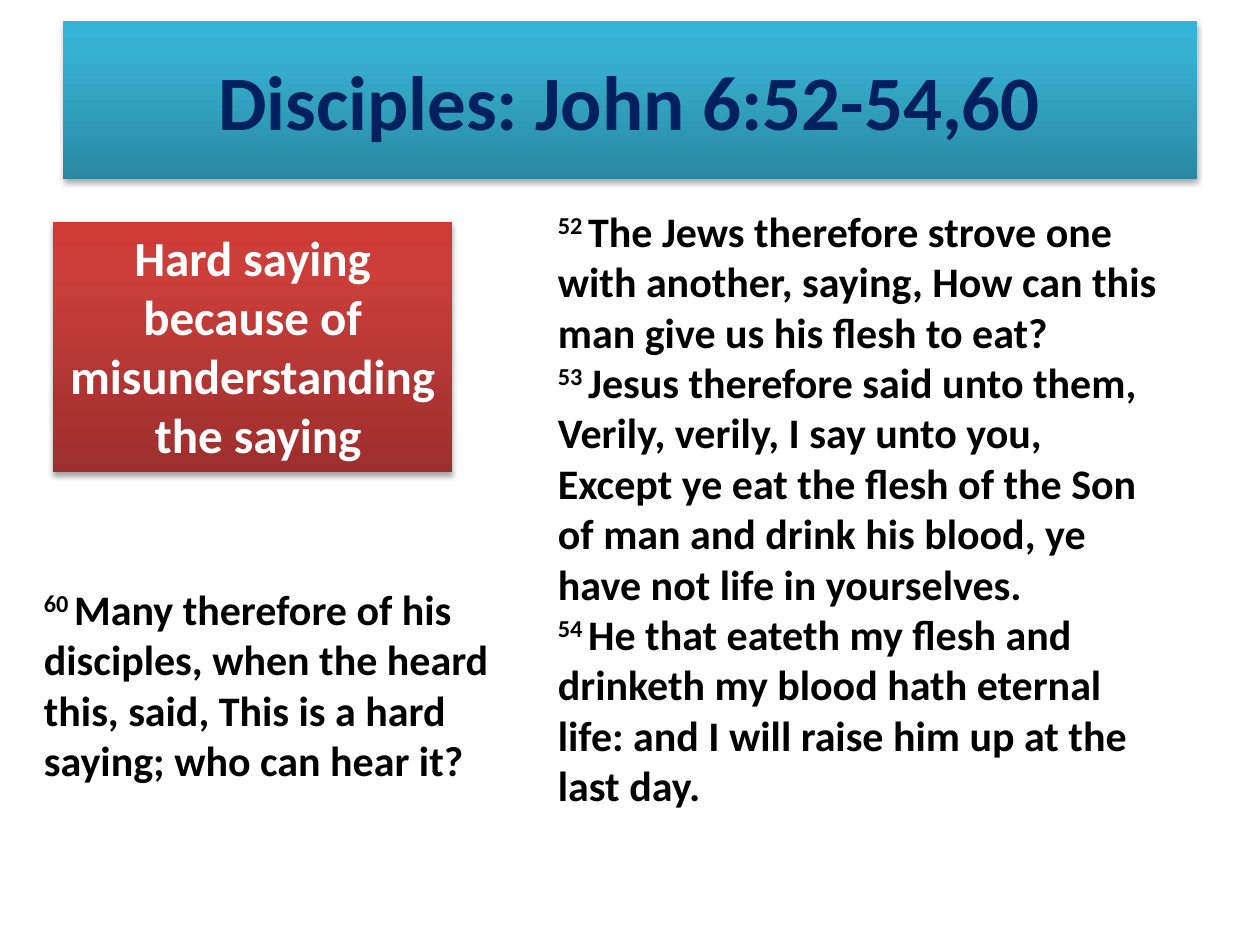
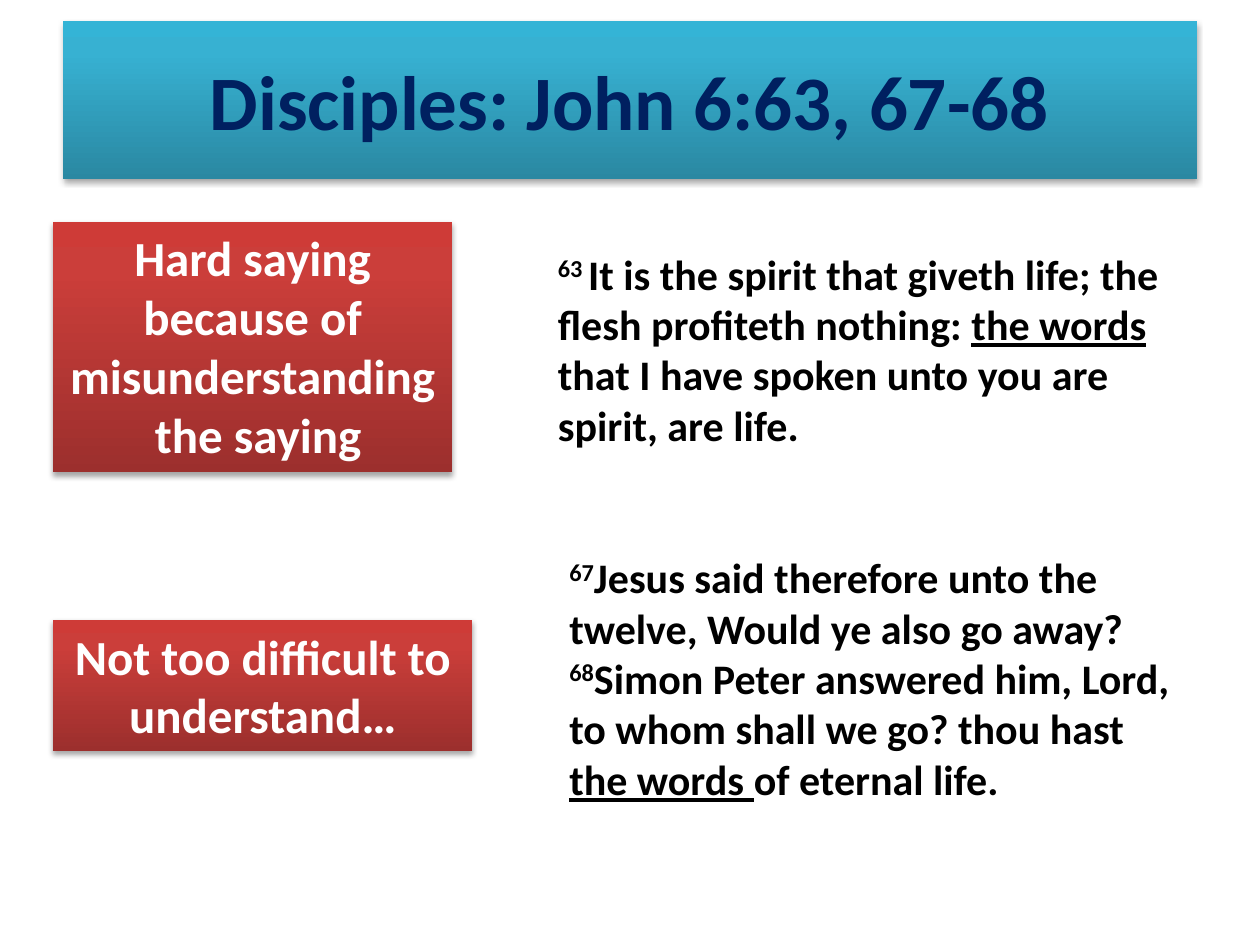
import pptx
import pptx.dml.color
import pptx.enum.shapes
import pptx.enum.text
import pptx.oxml
import pptx.oxml.ns
import pptx.util
from dataclasses import dataclass

Inches = pptx.util.Inches
Align = pptx.enum.text.PP_ALIGN
Anchor = pptx.enum.text.MSO_ANCHOR
NS = pptx.oxml.ns.nsdecls("a")


@dataclass(frozen=True)
class Theme:
    font: str = "Calibri"
    navy: str = "002060"
    white: str = "FFFFFF"
    black: str = "000000"
    # Gradient colours, from the bottom edge up
    teal: tuple = ("2A88A2", "37B1D2", "34B4D6")
    red: tuple = ("9C2F2D", "CB3E3A", "CE3B37")
    stops: tuple = (0, 80, 100)
    head: int = 44
    label: int = 28
    body: int = 24


class Deck:
    def __init__(self, theme):
        self.theme = theme
        self.prs = pptx.Presentation()
        self.prs.slide_width = Inches(10)
        self.prs.slide_height = Inches(7.5)
        self.slide = None

    def place(self, shape, left, top, width, height):
        shape.left, shape.top = Inches(left), Inches(top)
        shape.width, shape.height = Inches(width), Inches(height)

    def glow(self, shape, tints):
        """Give a shape a vertical gradient, no outline and a soft shadow."""
        stops = "".join(
            f'<a:gs pos="{pos * 1000}"><a:srgbClr val="{tint}"/></a:gs>'
            for pos, tint in zip(self.theme.stops, tints))
        parts = (
            f'<a:gradFill {NS} rotWithShape="1"><a:gsLst>{stops}</a:gsLst>'
            '<a:lin ang="16200000" scaled="0"/></a:gradFill>',
            f'<a:ln {NS}><a:noFill/></a:ln>',
            f'<a:effectLst {NS}><a:outerShdw blurRad="40000" dist="23000" '
            'dir="5400000" rotWithShape="0"><a:srgbClr val="000000">'
            '<a:alpha val="35000"/></a:srgbClr></a:outerShdw></a:effectLst>')
        for part in parts:
            shape.element.spPr.append(pptx.oxml.parse_xml(part))

    def style(self, par, size, color, align):
        par.alignment = align
        font = par.font
        font.name, font.size, font.bold = self.theme.font, pptx.util.Pt(size), True
        font.color.rgb = pptx.dml.color.RGBColor.from_string(color)

    def frame(self, shape):
        text = shape.text_frame
        text.word_wrap = True
        text.vertical_anchor = Anchor.TOP
        text.auto_size = pptx.enum.text.MSO_AUTO_SIZE.SHAPE_TO_FIT_TEXT
        return text

    def page(self, title):
        self.slide = self.prs.slides.add_slide(self.prs.slide_layouts[5])
        band = self.slide.shapes.title
        self.place(band, 0.5, 0.17, 9, 1.25)
        self.glow(band, self.theme.teal)
        band.text_frame.text = title
        band.text_frame.vertical_anchor = Anchor.MIDDLE
        self.style(band.text_frame.paragraphs[0], self.theme.head,
                   self.theme.navy, Align.CENTER)

    def label(self, words, top, width, height):
        box = self.slide.shapes.add_shape(
            pptx.enum.shapes.MSO_SHAPE.RECTANGLE, 0, 0, 0, 0)
        self.place(box, 0.42, top, width, height)
        self.glow(box, self.theme.red)
        text = self.frame(box)
        text.text = words
        self.style(text.paragraphs[0], self.theme.label, self.theme.white,
                   Align.CENTER)

    def verses(self, lines, left, top, width, height):
        """Each line is a verse number, then text; odd pieces are underlined."""
        box = self.slide.shapes.add_textbox(0, 0, 0, 0)
        self.place(box, left, top, width, height)
        text = self.frame(box)
        for row, (number, *pieces) in enumerate(lines):
            par = text.add_paragraph() if row else text.paragraphs[0]
            self.style(par, self.theme.body, self.theme.black, Align.LEFT)
            mark = par.add_run()
            mark.text = number
            mark.font._element.set("baseline", "30000")
            for step, piece in enumerate(pieces):
                run = par.add_run()
                run.text = piece
                if step % 2:
                    run.font.underline = True


def main():
    deck = Deck(Theme())
    hard = ("Hard saying because of misunderstanding  the saying", 1.76, 3.17, 1.99)

    # Slide 1: the hard saying
    deck.page("Disciples: John 6:52-54,60")
    deck.label(*hard)
    deck.verses([
        ("52 ", "The Jews therefore strove one with another, saying, "
                "How can this man give us his flesh to eat?"),
        ("53 ", "Jesus therefore said unto them, Verily, verily, I say unto you, "
                "Except ye eat the flesh of the Son of man and drink his blood, "
                "ye have not life in yourselves."),
        ("54 ", "He that eateth my flesh and drinketh my blood hath eternal life: "
                "and I will raise him up at the last day."),
    ], 4.33, 1.58, 5, 4.95)
    deck.verses([
        ("60 ", "Many therefore of his disciples, when the heard this, said, "
                "This is a hard saying; who can hear it?"),
    ], 0.25, 4.58, 3.92, 1.72)

    # Slide 2: the words of life
    deck.page("Disciples: John 6:63, 67-68")
    deck.label(*hard)
    deck.verses([
        ("63 ", "It is the spirit that giveth life; the flesh profiteth nothing: ",
         "the words", " that I have spoken unto you are spirit, are life."),
    ], 4.33, 1.92, 5, 1.72)
    deck.verses([
        ("67", "Jesus said therefore unto the twelve, Would ye also go away?"),
        ("68", "Simon Peter answered him, Lord, to whom shall we go? thou hast ",
         "the words ", "of eternal life."),
    ], 4.42, 4.33, 5, 2.12)
    deck.label("Not too difficult to understand…", 4.92, 3.33, 1.04)

    deck.prs.save("out.pptx")


if __name__ == "__main__":
    main()
